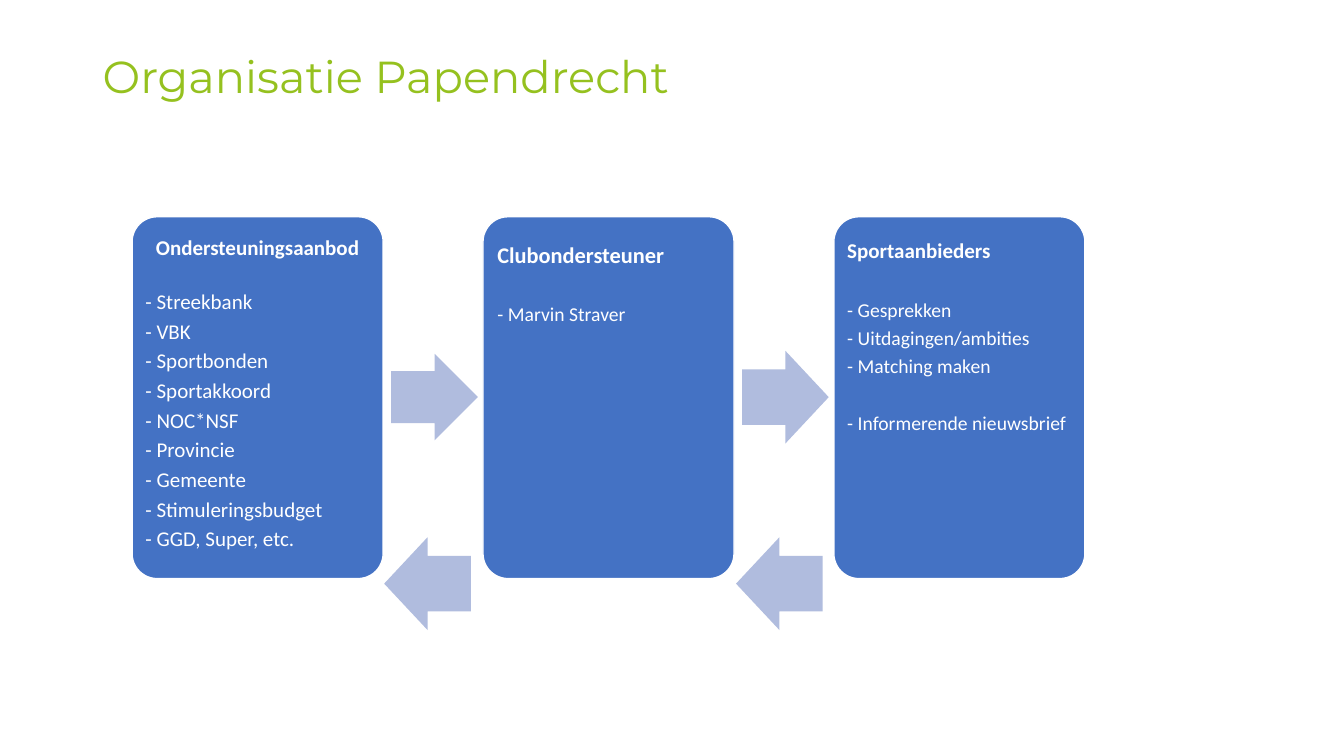
from dataclasses import dataclass

import pptx
import pptx.dml.color
import pptx.enum.shapes
import pptx.enum.text
import pptx.slide
import pptx.text.text
import pptx.util

Inches = pptx.util.Inches
Pt = pptx.util.Pt
Align = pptx.enum.text.PP_ALIGN
Anchor = pptx.enum.text.MSO_ANCHOR
Preset = pptx.enum.shapes.MSO_SHAPE

COLORS = {"title": "95C11F", "card": "4472C4", "arrow": "B0BCDE", "white": "FFFFFF"}
CARD_LEFT, CARD_TOP, CARD_WIDTH, CARD_HEIGHT = 1.31, 2.15, 2.49, 3.59
CARD_PITCH = 3.48
ARROW_WIDTH = 0.86


@dataclass
class Card:
    heading: str
    items: list[str]
    heading_size: int
    item_size: int
    heading_gap: float
    top_inset: float
    side_inset: float = 0.06
    heading_align: Align = Align.LEFT
    last_item_gap: int = 0


@dataclass
class Arrow:
    left: float
    top: float
    height: float
    rotation: int = 0


CARDS = [
    Card(
        "Ondersteuningsaanbod",
        ["Streekbank", "VBK", "Sportbonden", "Sportakkoord", "NOC*NSF", "Provincie",
         "Gemeente", "Stimuleringsbudget", "GGD, Super, etc."],
        15, 15, 22.5, 0.13, heading_align=Align.CENTER,
    ),
    Card("Clubondersteuner", ["Marvin Straver"], 16, 14, 25.5, 0.2, side_inset=0.07),
    Card(
        "Sportaanbieders",
        ["Gesprekken", "Uitdagingen/ambities", "Matching maken", "Informerende nieuwsbrief"],
        15, 14, 27, 0.16, last_item_gap=20,
    ),
]

ARROWS = [
    Arrow(3.88, 3.51, 0.86),
    Arrow(7.36, 3.48, 0.92),
    Arrow(7.3, 5.33, 0.92, 180),
    Arrow(3.81, 5.33, 0.92, 180),
]


def rgb(name: str) -> pptx.dml.color.RGBColor:
    return pptx.dml.color.RGBColor.from_string(COLORS[name])


def format_paragraph(
    paragraph: pptx.text.text._Paragraph, size: int, color: str,
    font_name: str = "Calibri", bold: bool = False,
) -> None:
    paragraph.line_spacing = 0.9
    for run in paragraph.runs:
        run.font.name = font_name
        run.font.size = Pt(size)
        run.font.bold = bold
        run.font.color.rgb = rgb(color)


def draw_title(slide: pptx.slide.Slide, text: str) -> None:
    shape = slide.shapes.add_textbox(Inches(0.92), Inches(0.4), Inches(10.46), Inches(0.77))
    text_frame = shape.text_frame
    text_frame.word_wrap = True
    text_frame.vertical_anchor = Anchor.MIDDLE
    text_frame.text = text
    format_paragraph(text_frame.paragraphs[0], 32, "title", "Montserrat")


def draw_card(slide: pptx.slide.Slide, card: Card, column: int) -> None:
    shape = slide.shapes.add_shape(
        Preset.ROUNDED_RECTANGLE,
        Inches(CARD_LEFT + column * CARD_PITCH), Inches(CARD_TOP),
        Inches(CARD_WIDTH), Inches(CARD_HEIGHT),
    )
    shape.adjustments[0] = 0.1
    shape.shadow.inherit = False
    shape.fill.solid()
    shape.fill.fore_color.rgb = rgb("card")
    shape.line.color.rgb = rgb("white")
    shape.line.width = Pt(1)

    text_frame = shape.text_frame
    text_frame.word_wrap = True
    text_frame.vertical_anchor = Anchor.TOP
    text_frame.margin_left = text_frame.margin_right = Inches(card.side_inset)
    text_frame.margin_top = Inches(card.top_inset)
    text_frame.margin_bottom = Inches(0.06)
    text_frame.text = "\n".join([card.heading] + [f"- {item}" for item in card.items])

    heading, *items = text_frame.paragraphs
    heading.alignment = card.heading_align
    heading.space_after = Pt(card.heading_gap)
    format_paragraph(heading, card.heading_size, "white", bold=True)
    for paragraph in items:
        paragraph.alignment = Align.LEFT
        paragraph.space_after = Pt(5)
        format_paragraph(paragraph, card.item_size, "white")
    items[-1].space_before = Pt(card.last_item_gap)


def draw_arrow(slide: pptx.slide.Slide, arrow: Arrow) -> None:
    shape = slide.shapes.add_shape(
        Preset.RIGHT_ARROW, Inches(arrow.left), Inches(arrow.top),
        Inches(ARROW_WIDTH), Inches(arrow.height),
    )
    shape.adjustments[0] = 0.6
    shape.adjustments[1] = 0.5
    shape.rotation = arrow.rotation
    shape.shadow.inherit = False
    shape.fill.solid()
    shape.fill.fore_color.rgb = rgb("arrow")
    shape.line.fill.background()


def main() -> None:
    presentation = pptx.Presentation()
    presentation.slide_width = Inches(13.33)
    presentation.slide_height = Inches(7.5)
    slide = presentation.slides.add_slide(presentation.slide_layouts[6])
    draw_title(slide, "Organisatie Papendrecht")
    for column, card in enumerate(CARDS):
        draw_card(slide, card, column)
    for arrow in ARROWS:
        draw_arrow(slide, arrow)
    presentation.save("out.pptx")


if __name__ == "__main__":
    main()
